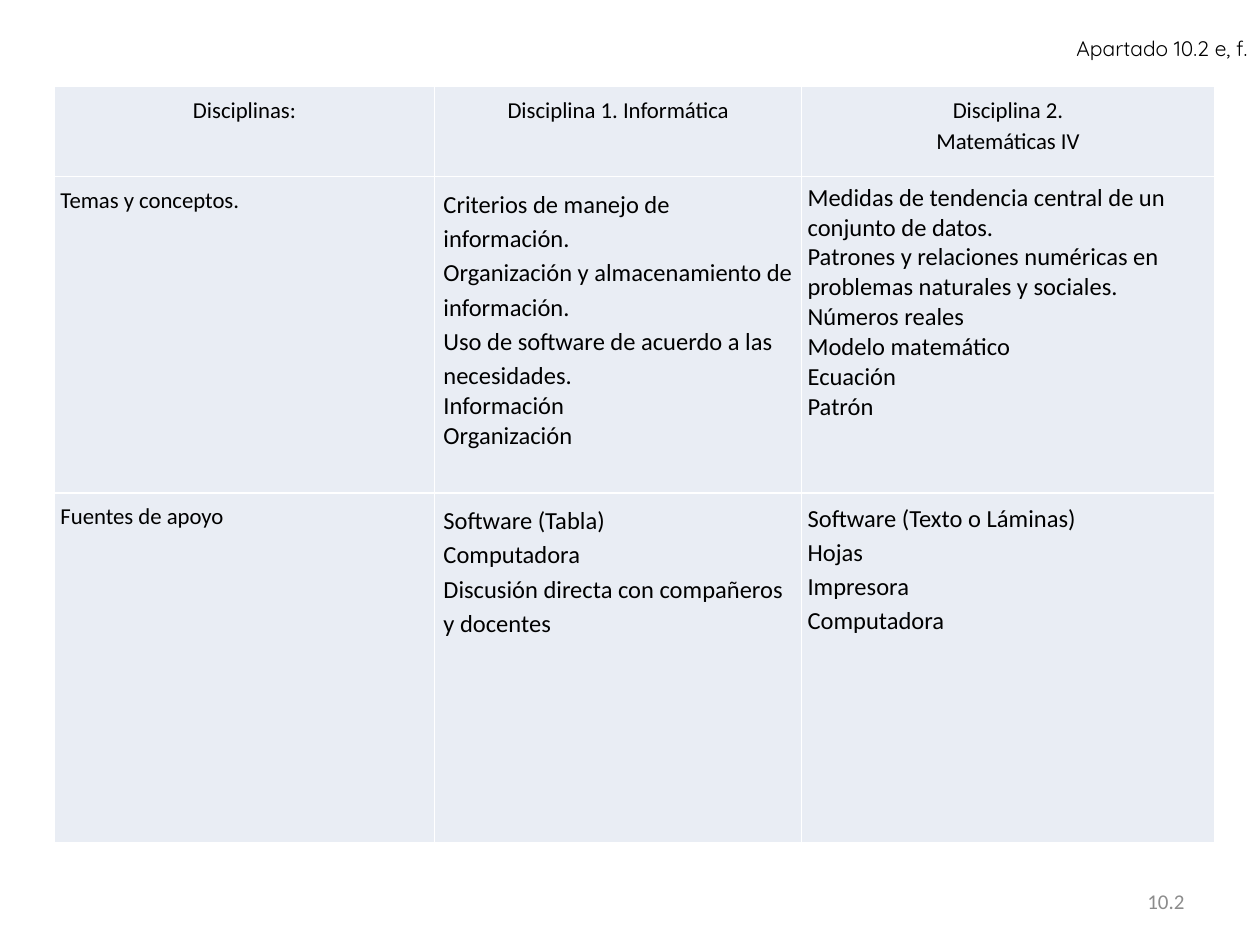
from lxml.etree import SubElement as Sub
from pptx import Presentation
from pptx.dml.color import RGBColor as RGB
from pptx.enum.text import MSO_ANCHOR as Anchor, PP_ALIGN as Align
from pptx.oxml.ns import qn
from pptx.util import Inches, Pt

HUES = {"ink": "000000", "pale": "E9EDF4", "line": "FFFFFF", "gray": "8C8C8C"}
LOOSE = 1.15
COLS = (3.02, 2.91, 3.28)
ROWS = (0.72, 2.51, 2.78)

# Each cell: paragraphs, and how many of them (from the first) are loosely spaced
CELLS = (
    (
        (["Disciplinas:"], 1),
        (["Disciplina 1. Informática"], 1),
        (["Disciplina 2.", "Matemáticas IV"], 2),
    ),
    (
        (["Temas y conceptos."], 1),
        (["Criterios de manejo de información.",
          "Organización y almacenamiento de información.",
          "Uso de software de acuerdo a las necesidades.",
          "Información",
          "Organización"], 3),
        (["Medidas de tendencia central de un conjunto de datos.",
          "Patrones y relaciones numéricas en problemas naturales y sociales.",
          "Números reales",
          "Modelo matemático",
          "Ecuación",
          "Patrón"], 0),
    ),
    (
        (["Fuentes de apoyo"], 1),
        (["Software (Tabla)",
          "Computadora",
          "Discusión directa con compañeros y docentes"], 3),
        (["Software (Texto o Láminas)",
          "Hojas",
          "Impresora",
          "Computadora"], 4),
    ),
)


class Deck:
    def __init__(self, wide, high):
        self.prs = Presentation()
        self.prs.slide_width = Inches(wide)
        self.prs.slide_height = Inches(high)
        self.slide = self.prs.slides.add_slide(self.prs.slide_layouts[6])

    def spot(self, x, y, w, h):
        """Turn shares of the slide into lengths."""
        wide, high = self.prs.slide_width, self.prs.slide_height
        return int(x * wide), int(y * high), int(w * wide), int(h * high)

    def style(self, para, size, align, face="Calibri", hue="ink"):
        para.alignment = align
        para.font.size = Pt(size)
        para.font.name = face
        para.font.color.rgb = RGB.from_string(HUES[hue])

    def label(self, text, box, anchor=Anchor.TOP, **look):
        frame = self.slide.shapes.add_textbox(*self.spot(*box)).text_frame
        frame.word_wrap = True
        frame.vertical_anchor = anchor
        frame.text = text
        self.style(frame.paragraphs[0], 12, Align.RIGHT, **look)

    def edge(self, cell):
        """Draw a thin line on all four sides of a cell."""
        props = cell._tc.get_or_add_tcPr()
        for at, side in enumerate(("lnL", "lnR", "lnT", "lnB")):
            line = Sub(props, qn(f"a:{side}"), w=str(Pt(1)))
            Sub(Sub(line, qn("a:solidFill")), qn("a:srgbClr"), val=HUES["line"])
            props.insert(at, line)

    def fill(self, cell, lines, loose, size, align, pad):
        cell.fill.solid()
        cell.fill.fore_color.rgb = RGB.from_string(HUES["pale"])
        cell.margin_left = cell.margin_right = Inches(pad)
        cell.margin_top = cell.margin_bottom = Inches(pad)
        cell.text = "\n".join(lines)
        for at, para in enumerate(cell.text_frame.paragraphs):
            self.style(para, size, align)
            if at < loose:
                para.line_spacing = LOOSE
        self.edge(cell)

    def table(self, box, cols, rows, cells):
        grid = self.slide.shapes.add_table(
            len(rows), len(cols), *self.spot(*box)).table
        for col, wide in zip(grid.columns, cols):
            col.width = Inches(wide)
        for row, high in zip(grid.rows, rows):
            row.height = Inches(high)
        for r, line in enumerate(cells):
            for c, (lines, loose) in enumerate(line):
                self.fill(
                    grid.cell(r, c), lines, loose,
                    size=14 if r and c else 13,
                    align=Align.LEFT if r else Align.CENTER,
                    pad=0.07 if r and c == 1 else 0.05)


def main():
    deck = Deck(10, 7.5)
    deck.label("10.2", (0.717, 0.927, 0.233, 0.053), Anchor.MIDDLE, hue="gray")
    deck.table((0.043, 0.091, 0.921, 0.801), COLS, ROWS, CELLS)
    deck.label("Apartado 10.2 e, f.", (0.195, 0.031, 0.805, 0.04),
               face="Quicksand")
    deck.prs.save("out.pptx")


if __name__ == "__main__":
    main()
